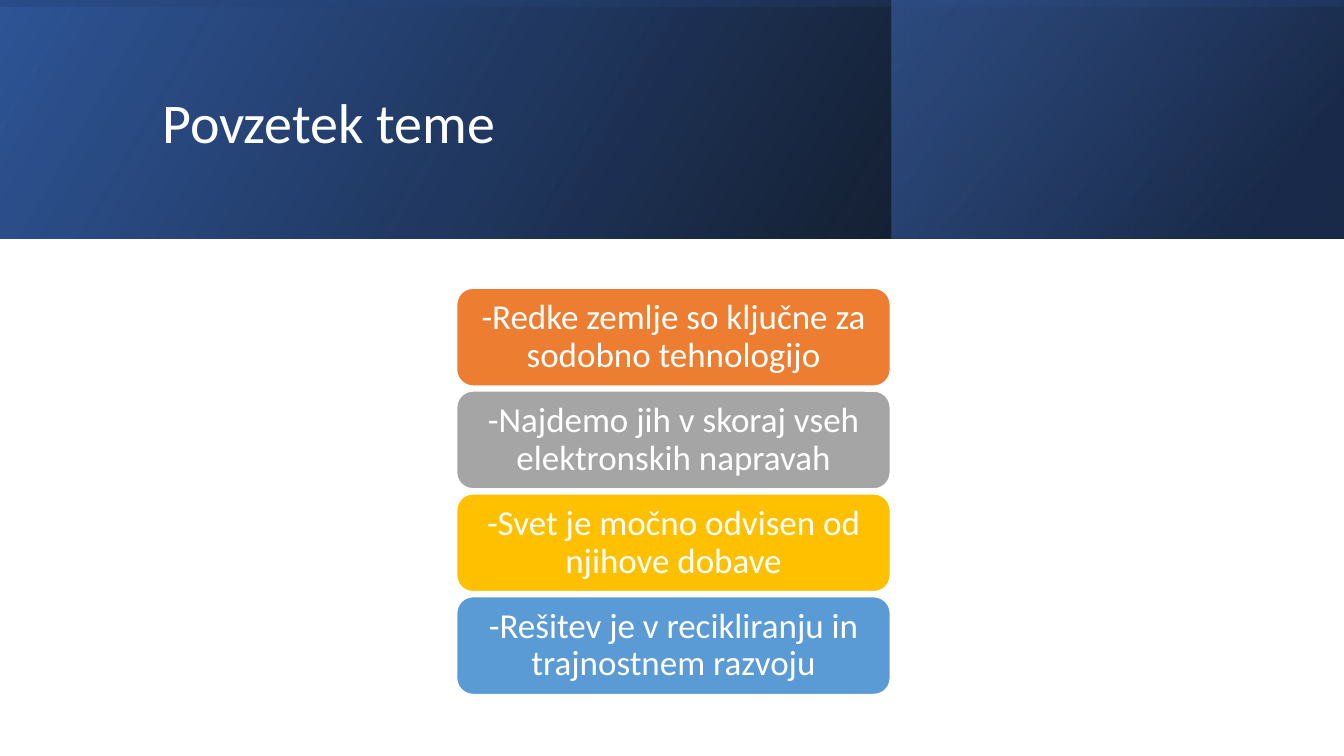
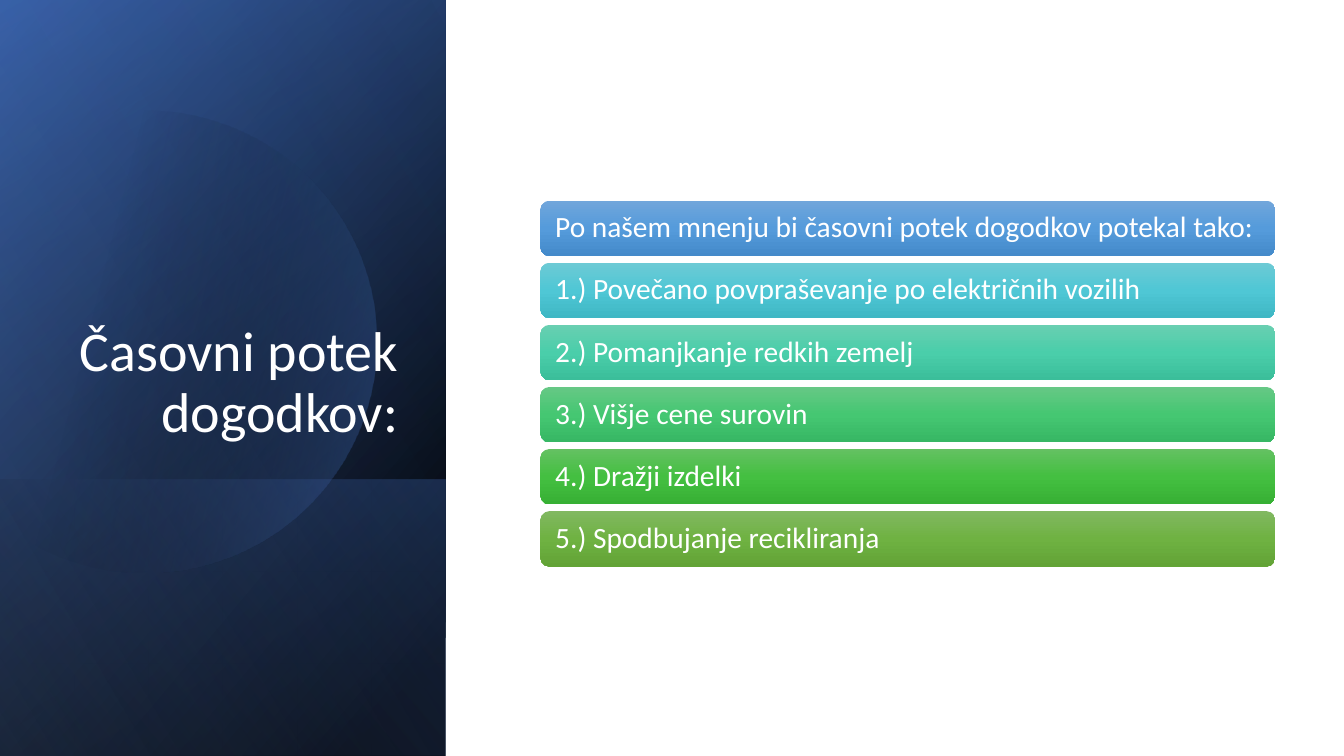
import dataclasses
import math

import pptx
import pptx.dml.color
import pptx.enum.shapes
import pptx.enum.text
import pptx.oxml
import pptx.oxml.ns
import pptx.util

Inches = pptx.util.Inches
Shapes = pptx.enum.shapes.MSO_SHAPE
Align = pptx.enum.text.PP_ALIGN
Anchor = pptx.enum.text.MSO_ANCHOR


@dataclasses.dataclass(frozen=True)
class Theme:
    font: str = "Calibri"
    title_size: int = 40
    summary_size: int = 25
    timeline_size: int = 21
    line_spacing: float = 0.9
    white: str = "FFFFFF"
    black: str = "000000"
    blue: str = "4472C4"
    deep_blue: str = "2F5597"
    navy: str = "203864"
    pale_blue: str = "8FAADC"
    summary_fills: tuple = ("ED7D31", "A5A5A5", "FFC000", "5B9BD5")
    timeline_fills: tuple = (
        ("71A6DB", "559BDB", "448ACA"),
        ("6DCAD5", "4FC7D5", "3FB7C4"),
        ("69CFB1", "4ACEAA", "3BBE9A"),
        ("66C885", "45C772", "37B764"),
        ("64C162", "44BF41", "37B034"),
        ("81B861", "6FB242", "62A336"),
    )


THEME = Theme()

SUMMARY = (
    "-Redke zemlje so ključne za sodobno tehnologijo",
    "-Najdemo jih v skoraj vseh elektronskih napravah",
    "-Svet je močno odvisen od njihove dobave",
    "-Rešitev je v recikliranju in trajnostnem razvoju",
)
TIMELINE = (
    "Po našem mnenju bi časovni potek dogodkov potekal tako:",
    "1.) Povečano povpraševanje po električnih vozilih",
    "2.) Pomanjkanje redkih zemelj",
    "3.) Višje cene surovin",
    "4.) Dražji izdelki",
    "5.) Spodbujanje recikliranja",
)


def rgb(color):
    return pptx.dml.color.RGBColor.from_string(color)


def fill_gradient(shape, stops, angle):
    """Fill with (position %, colour, opacity %) stops; the angle runs clockwise."""
    stop_xml = "".join(
        f'<a:gs pos="{position * 1000}"><a:srgbClr val="{color}">'
        f'<a:alpha val="{opacity * 1000}"/></a:srgbClr></a:gs>'
        for position, color, opacity in stops
    )
    gradient = pptx.oxml.parse_xml(
        f'<a:gradFill {pptx.oxml.ns.nsdecls("a")} rotWithShape="1">'
        f"<a:gsLst>{stop_xml}</a:gsLst>"
        f'<a:lin ang="{angle * 60000}" scaled="0"/></a:gradFill>'
    )
    # The fill follows the transform and the geometry.
    shape.element.spPr.insert(2, gradient)


def clear_effects(shape):
    shape.shadow.inherit = False
    shape.line.fill.background()


def add_band(slide, box, stops, angle, rotation=0):
    """Add a mirrored gradient rectangle."""
    band = slide.shapes.add_shape(Shapes.RECTANGLE, *map(Inches, box))
    clear_effects(band)
    band.rotation = rotation
    band.element.spPr.xfrm.set("flipH", "1")
    fill_gradient(band, stops, angle)


def add_disc(slide, center_x, center_y, radius, stops, angle):
    """Add a disc cut straight at the left edge of the slide."""
    limit = math.acos(-center_x / radius)
    steps = 120
    turns = [limit * (2 * step / steps - 1) for step in range(steps + 1)]
    points = [
        (Inches(center_x + radius * math.cos(turn)), Inches(center_y + radius * math.sin(turn)))
        for turn in turns
    ]
    builder = slide.shapes.build_freeform(*points[0])
    builder.add_line_segments(points[1:], close=True)
    disc = builder.convert_to_shape()
    clear_effects(disc)
    fill_gradient(disc, stops, angle)


def write_text(shape, text, size, alignment, anchor):
    frame = shape.text_frame
    frame.text = text
    frame.word_wrap = True
    frame.auto_size = pptx.enum.text.MSO_AUTO_SIZE.NONE
    frame.vertical_anchor = anchor
    paragraph = frame.paragraphs[0]
    paragraph.alignment = alignment
    paragraph.line_spacing = THEME.line_spacing
    paragraph.font.name = THEME.font
    paragraph.font.size = pptx.util.Pt(size)
    paragraph.font.color.rgb = rgb(THEME.white)


def place_title(slide, text, box, alignment, anchor):
    """Fill the title placeholder and bring it in front of the bands."""
    title = slide.shapes.title
    title.left, title.top, title.width, title.height = map(Inches, box)
    write_text(title, text, THEME.title_size, alignment, anchor)
    title.element.getparent().append(title.element)


def add_cards(slide, texts, first_box, last_top, size, alignment, margin):
    """Stack one rounded card per text, evenly from the first box to the last top."""
    left, top, width, height = first_box
    pitch = (last_top - top) / (len(texts) - 1)
    cards = []
    for index, text in enumerate(texts):
        box = (left, top + index * pitch, width, height)
        card = slide.shapes.add_shape(Shapes.ROUNDED_RECTANGLE, *map(Inches, box))
        clear_effects(card)
        write_text(card, text, size, alignment, Anchor.MIDDLE)
        frame = card.text_frame
        frame.margin_left = frame.margin_right = Inches(margin)
        frame.margin_top = frame.margin_bottom = 0
        cards.append(card)
    return cards


def add_slide(presentation):
    title_only = presentation.slide_layouts[5]
    return presentation.slides.add_slide(title_only)


def build_summary(presentation):
    slide = add_slide(presentation)
    add_band(slide, (0, 0, 13.33, 2.37),
             [(0, THEME.black, 96), (100, THEME.deep_blue, 100)], 330)
    add_band(slide, (8.84, 0, 4.49, 2.37),
             [(19, THEME.navy, 68), (100, THEME.blue, 48)], 320)
    add_band(slide, (5.48, -5.48, 2.37, 13.33),
             [(23, THEME.deep_blue, 16), (99, THEME.black, 45)], 350, rotation=270)
    place_title(slide, "Povzetek teme", (1.51, 0.38, 10.63, 1.72), Align.LEFT, Anchor.MIDDLE)
    cards = add_cards(slide, SUMMARY, (4.53, 2.86, 4.3, 0.97), 5.92,
                      THEME.summary_size, Align.CENTER, 0.15)
    for card, color in zip(cards, THEME.summary_fills):
        card.fill.solid()
        card.fill.fore_color.rgb = rgb(color)
        card.line.color.rgb = rgb(THEME.white)
        card.line.width = pptx.util.Pt(1)


def build_timeline(presentation):
    slide = add_slide(presentation)
    panel = (-1.54, 1.54, 7.5, 4.42)
    add_band(slide, panel,
             [(8, THEME.black, 100), (100, THEME.deep_blue, 100)], 50, rotation=90)
    add_band(slide, panel,
             [(0, THEME.black, 0), (99, THEME.blue, 46)], 30, rotation=90)
    add_band(slide, (0.84, 3.92, 2.74, 4.42),
             [(2, THEME.blue, 29), (100, THEME.black, 30)], 130, rotation=90)
    add_disc(slide, 1.44, 3.39, 2.29,
             [(29, THEME.black, 0), (100, THEME.blue, 43)], 14)
    add_band(slide, panel,
             [(0, THEME.black, 0), (99, THEME.pale_blue, 11)], 120, rotation=90)
    place_title(slide, "Časovni potek dogodkov:", (0.64, 1.84, 3.41, 2.62),
                Align.RIGHT, Anchor.BOTTOM)
    cards = add_cards(slide, TIMELINE, (5.36, 1.99, 7.29, 0.55), 5.07,
                      THEME.timeline_size, Align.LEFT, 0.12)
    for card, colors in zip(cards, THEME.timeline_fills):
        stops = [(index * 50, color, 100) for index, color in enumerate(colors)]
        fill_gradient(card, stops, 90)


def main():
    presentation = pptx.Presentation()
    presentation.slide_width = Inches(13.33)
    presentation.slide_height = Inches(7.5)
    build_summary(presentation)
    build_timeline(presentation)
    presentation.save("out.pptx")


if __name__ == "__main__":
    main()
